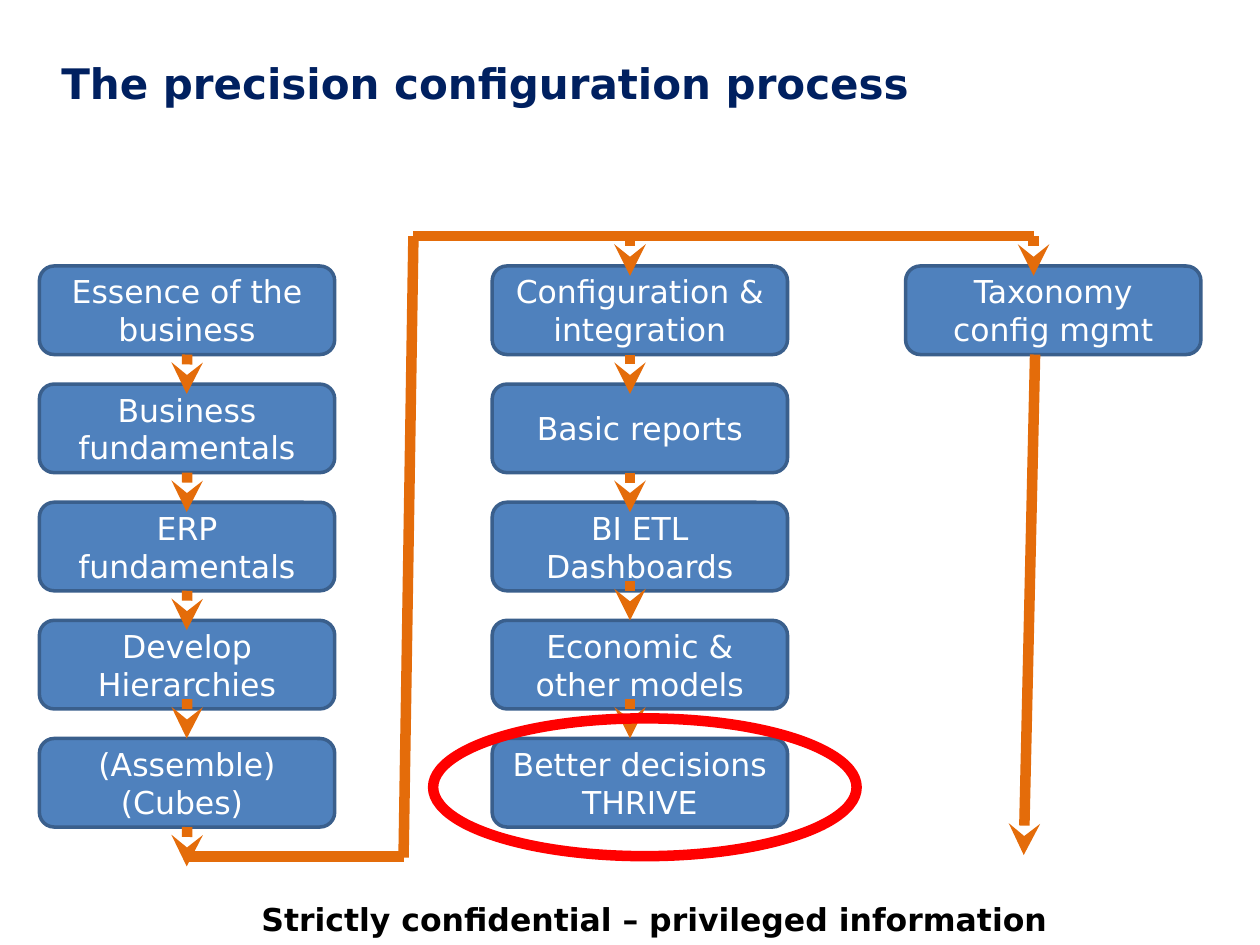
from lxml import etree
from pptx import Presentation
from pptx.dml.color import RGBColor
from pptx.enum.shapes import MSO_CONNECTOR, MSO_SHAPE
from pptx.enum.text import MSO_ANCHOR, PP_ALIGN
from pptx.oxml.ns import qn
from pptx.util import Pt

STRAIGHT = MSO_CONNECTOR.STRAIGHT
ROUNDED, OVAL = MSO_SHAPE.ROUNDED_RECTANGLE, MSO_SHAPE.OVAL
LEFT, CENTER = PP_ALIGN.LEFT, PP_ALIGN.CENTER
TOP, MIDDLE = MSO_ANCHOR.TOP, MSO_ANCHOR.MIDDLE

FONT = "DejaVu Sans"
NAVY, BLACK, WHITE = "002060", "000000", "FFFFFF"
BLUE, EDGE, ORANGE, RED = "4F81BD", "3A5F8C", "E46C0A", "FF0000"

TITLE = "The precision configuration process"
FOOTER = "Strictly confidential – privileged information"

# Left edge of each column and its steps; a step is a list of paragraphs.
COLUMNS = [
    (22.5, [["Essence of the business"], ["Business fundamentals"],
            ["ERP fundamentals"], ["Develop Hierarchies"],
            ["(Assemble)", "(Cubes) "]]),
    (281.25, [["Configuration & integration"], ["Basic reports"],
              ["BI ETL", "Dashboards"], ["Economic & other models"],
              ["Better decisions", "THRIVE"]]),
    (517.5, [["Taxonomy config mgmt"]]),
]
STEP_TOP, STEP_PITCH, STEP_WIDTH, STEP_HEIGHT = 152, 67.5, 168.75, 50.6

# Short arrows: start x, end x, and the row each one leaves (-1 is the rail
# above the first row) with how far it is raised above that row's lower edge.
ARROW_LENGTH, RAISED = 22.5, 5.6
ARROWS = [
    (107, 106.7, [(0, 0), (1, 0), (2, 0), (3, RAISED), (4, 0)]),
    (360, 360, [(-1, 0), (0, 0), (1, 0), (2, RAISED), (3, RAISED)]),
    (590.6, 590.6, [(-1, 0)]),
]

# Long lines: start, end, has an arrowhead.
RAIL = 135
LINES = [
    ((106.7, 489.4), (230.6, 489.4), False),
    ((236.25, RAIL), (230.6, 490), False),
    ((236.25, RAIL), (360, RAIL), False),
    ((354.4, RAIL), (590.6, RAIL), False),
    ((591.5, 202.6), (585, 488.6), True),
]


def color(value):
    return RGBColor.from_string(value)


def write(box, lines, size, ink, bold=False, align=CENTER, anchor=MIDDLE):
    frame = box.text_frame
    frame.word_wrap = True
    frame.vertical_anchor = anchor
    for index, line in enumerate(lines):
        para = frame.add_paragraph() if index else frame.paragraphs[0]
        para.alignment = align
        span = para.add_run()
        span.text = line
        span.font.name, span.font.size, span.font.bold = FONT, Pt(size), bold
        span.font.color.rgb = color(ink)


def add_shape(page, kind, place, fill, line, width):
    shape = page.shapes.add_shape(kind, *map(Pt, place))
    shape.shadow.inherit = False
    if fill:
        shape.fill.solid()
        shape.fill.fore_color.rgb = color(fill)
    else:
        shape.fill.background()
    shape.line.color.rgb = color(line)
    shape.line.width = Pt(width)
    return shape


def add_line(page, start, end, head):
    line = page.shapes.add_connector(STRAIGHT, *map(Pt, start + end))
    line.line.color.rgb = color(ORANGE)
    line.line.width = Pt(6)
    if head:
        etree.SubElement(line.line._get_or_add_ln(), qn("a:tailEnd"), type="stealth")
    etree.SubElement(line._element.spPr, qn("a:effectLst"))


def row_top(row):
    return STEP_TOP + row * STEP_PITCH


def main():
    deck = Presentation()
    deck.slide_width, deck.slide_height = Pt(720), Pt(540)
    page = deck.slides.add_slide(deck.slide_layouts[6])

    title = page.shapes.add_textbox(Pt(28), Pt(16.5), Pt(540), Pt(62))
    write(title, [TITLE], 24, NAVY, bold=True, align=LEFT)
    footer = page.shapes.add_textbox(Pt(124), Pt(511), Pt(500), Pt(29))
    write(footer, [FOOTER], 18, BLACK, bold=True, anchor=TOP)

    for left, steps in COLUMNS:
        for row, lines in enumerate(steps):
            place = (left, row_top(row), STEP_WIDTH, STEP_HEIGHT)
            write(add_shape(page, ROUNDED, place, BLUE, EDGE, 2), lines, 18, WHITE)

    for start_x, end_x, rows in ARROWS:
        for row, raised in rows:
            y = row_top(row) + STEP_HEIGHT - raised
            add_line(page, (start_x, y), (end_x, y + ARROW_LENGTH), True)
    for start, end, head in LINES:
        add_line(page, start, end, head)

    add_shape(page, OVAL, (247.5, 410.5, 242, 78.75), None, RED, 6)
    deck.save("out.pptx")


if __name__ == "__main__":
    main()
